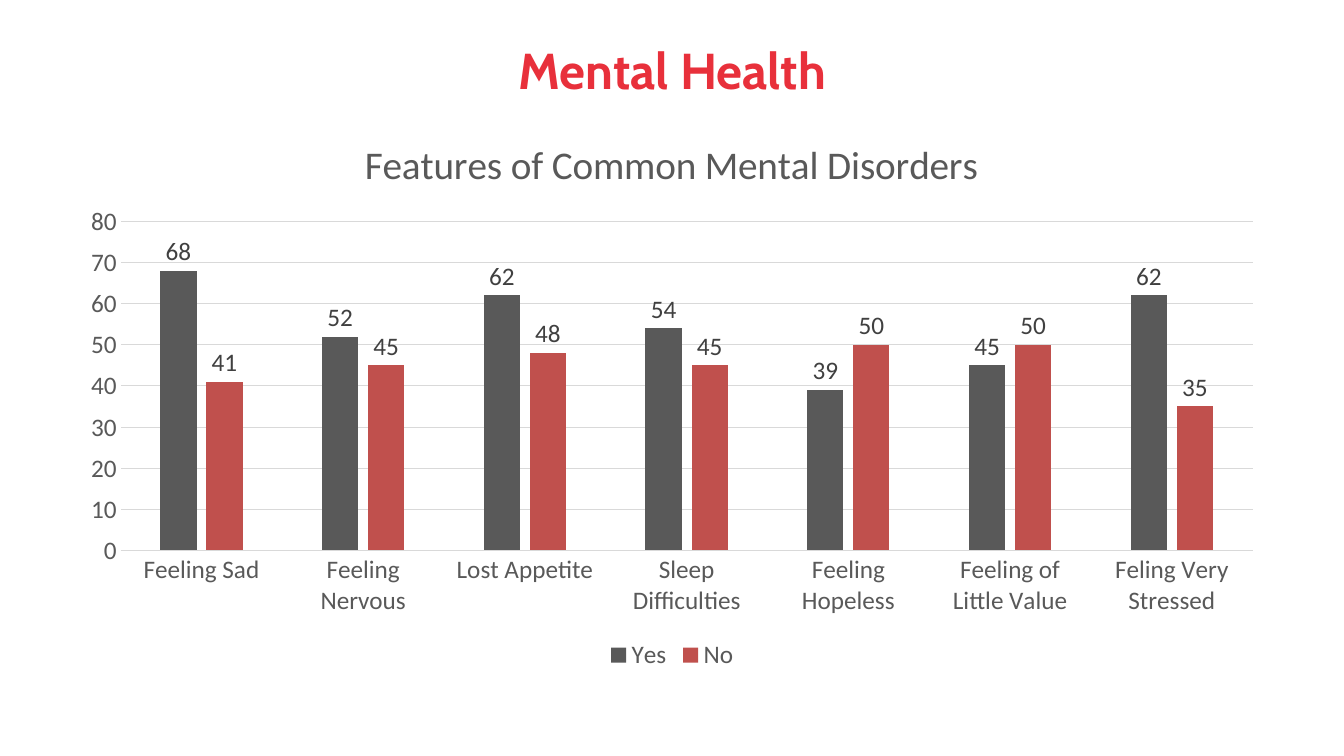
from dataclasses import dataclass

from lxml import etree
from pptx import Presentation
from pptx.chart.data import CategoryChartData
from pptx.dml.color import RGBColor
from pptx.enum.chart import XL_CHART_TYPE, XL_LABEL_POSITION, XL_LEGEND_POSITION, XL_TICK_MARK
from pptx.enum.text import MSO_ANCHOR, PP_ALIGN
from pptx.oxml.ns import qn
from pptx.util import Cm, Pt

COLUMNS = XL_CHART_TYPE.COLUMN_CLUSTERED
ABOVE = XL_LABEL_POSITION.OUTSIDE_END
BOTTOM = XL_LEGEND_POSITION.BOTTOM
NO_TICK = XL_TICK_MARK.NONE
CENTER = PP_ALIGN.CENTER
MIDDLE = MSO_ANCHOR.MIDDLE


@dataclass
class Theme:
    head: str = "Cabin"
    body: str = "Calibri"
    red: str = "E8303B"
    gray: str = "595959"
    dark: str = "404040"
    rule: str = "D9D9D9"
    brick: str = "C0504D"
    title: int = 36
    chart: int = 28
    label: int = 18


# Content
GROUPS = ["Feeling Sad", "Feeling Nervous", "Lost Appetite", "Sleep Difficulties",
          "Feeling Hopeless", "Feeling of Little Value", "Feling Very Stressed"]
ANSWERS = {"Yes": (68, 52, 62, 54, 39, 45, 62),
           "No": (41, 45, 48, 45, 50, 50, 35)}


def apply(target, values):
    for name, value in values.items():
        setattr(target, name, value)


def place(parent, index, **spots):
    """Give a chart part a fixed place, in fractions of the chart."""
    for old in parent.findall(qn("c:layout")):
        parent.remove(old)
    layout = etree.Element(qn("c:layout"))
    manual = etree.SubElement(layout, qn("c:manualLayout"))
    for tag, value in spots.items():
        etree.SubElement(manual, qn(f"c:{tag}")).set("val", str(value))
    parent.insert(index, layout)


class Painter:
    def __init__(self, slide, theme):
        self.slide = slide
        self.theme = theme

    def font(self, font, size, color, face=None, bold=False):
        apply(font, {"name": face or self.theme.body, "size": Pt(size), "bold": bold})
        font.color.rgb = RGBColor.from_string(color)

    def line(self, line):
        line.width = Pt(0.75)
        line.color.rgb = RGBColor.from_string(self.theme.rule)

    def title(self, text, left, top, width, height):
        look = self.theme
        box = self.slide.shapes.title
        apply(box, {"left": left, "top": top, "width": width, "height": height})
        frame = box.text_frame
        apply(frame, {"text": text, "vertical_anchor": MIDDLE, "word_wrap": True})
        para = frame.paragraphs[0]
        para.alignment = CENTER
        self.font(para.runs[0].font, look.title, look.red, look.head, True)

    def columns(self, text, groups, answers, colors, *area):
        look = self.theme
        data = CategoryChartData()
        data.categories = groups
        for name, values in answers.items():
            data.add_series(name, values)
        chart = self.slide.shapes.add_chart(COLUMNS, *area, data).chart
        self.font(chart.font, look.label, look.gray)

        # Heading and plot area
        frame = chart.chart_title.text_frame
        frame.text = text
        self.font(frame.paragraphs[0].runs[0].font, look.chart, look.gray)
        place(chart.chart_title.element, 1, xMode="edge", yMode="edge", x=0.24, y=0.04)
        place(chart.element.find(".//" + qn("c:plotArea")), 0, layoutTarget="inner",
              xMode="edge", yMode="edge", x=0.044, y=0.2, w=0.936, h=0.58)

        # Columns and their values
        plot = chart.plots[0]
        apply(plot, {"gap_width": 219, "overlap": -27, "vary_by_categories": False})
        for series, color in zip(plot.series, colors):
            series.format.fill.solid()
            series.format.fill.fore_color.rgb = RGBColor.from_string(color)
            labels = series.data_labels
            apply(labels, {"show_value": True, "position": ABOVE})
            self.font(labels.font, look.label, look.dark)

        # Axes and legend
        for axis in (chart.category_axis, chart.value_axis):
            apply(axis, {"major_tick_mark": NO_TICK, "minor_tick_mark": NO_TICK})
            self.font(axis.tick_labels.font, look.label, look.gray)
        self.line(chart.category_axis.format.line)
        scale = chart.value_axis
        apply(scale, {"minimum_scale": 0, "maximum_scale": 80, "major_unit": 10})
        scale.format.line.fill.background()
        self.line(scale.major_gridlines.format.line)
        chart.has_legend = True
        apply(chart.legend, {"position": BOTTOM, "include_in_layout": False})
        self.font(chart.legend.font, look.label, look.gray)


def main():
    deck = Presentation()
    apply(deck, {"slide_width": Cm(33.87), "slide_height": Cm(19.05)})
    theme = Theme()
    paint = Painter(deck.slides.add_slide(deck.slide_layouts[5]), theme)
    left, width = Cm(1.7), Cm(30.48)
    paint.title("Mental Health", left, Cm(0.76), width, Cm(1.96))
    paint.columns("Features of Common Mental Disorders", GROUPS, ANSWERS,
                  (theme.gray, theme.brick), left, Cm(2.72), width, Cm(14.3))
    deck.save("out.pptx")


if __name__ == "__main__":
    main()
